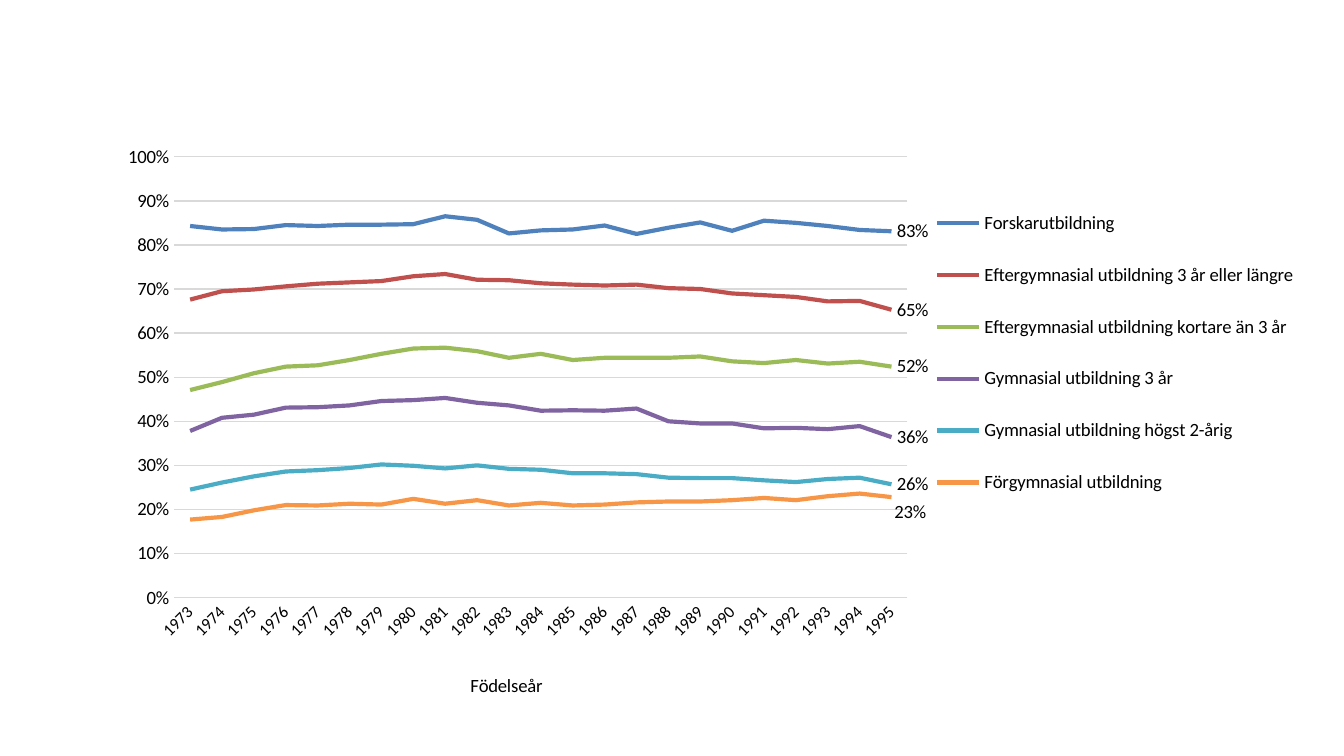
from pptx import Presentation
from pptx.chart.data import CategoryChartData
from pptx.dml.color import RGBColor
from pptx.enum.chart import (XL_CHART_TYPE, XL_LABEL_POSITION, XL_LEGEND_POSITION,
                             XL_MARKER_STYLE, XL_TICK_MARK)
from pptx.oxml import parse_xml
from pptx.oxml.ns import nsdecls, qn
from pptx.util import Pt

FONT = "Calibri"
BLACK = RGBColor(0x00, 0x00, 0x00)
GRID = RGBColor(0xD9, 0xD9, 0xD9)
BLUE = RGBColor(0x4F, 0x81, 0xBD)
RED = RGBColor(0xC0, 0x50, 0x4D)
GREEN = RGBColor(0x9B, 0xBB, 0x59)
PURPLE = RGBColor(0x80, 0x64, 0xA2)
TEAL = RGBColor(0x4B, 0xAC, 0xC6)
ORANGE = RGBColor(0xF7, 0x96, 0x46)

YEARS = [str(year) for year in range(1973, 1996)]
SERIES = [
    ("Forskarutbildning", BLUE,
     [0.843, 0.835, 0.836, 0.845, 0.843, 0.846, 0.846, 0.847, 0.865, 0.857, 0.826, 0.833,
      0.835, 0.844, 0.825, 0.839, 0.851, 0.832, 0.855, 0.850, 0.843, 0.834, 0.831]),
    ("Eftergymnasial utbildning 3 år eller längre", RED,
     [0.676, 0.695, 0.699, 0.706, 0.712, 0.715, 0.718, 0.729, 0.734, 0.721, 0.720, 0.713,
      0.710, 0.708, 0.710, 0.702, 0.700, 0.690, 0.686, 0.682, 0.672, 0.673, 0.653]),
    ("Eftergymnasial utbildning kortare än 3 år", GREEN,
     [0.471, 0.489, 0.509, 0.524, 0.527, 0.539, 0.553, 0.565, 0.567, 0.559, 0.544, 0.553,
      0.539, 0.544, 0.544, 0.544, 0.547, 0.536, 0.532, 0.539, 0.531, 0.535, 0.524]),
    ("Gymnasial utbildning 3 år", PURPLE,
     [0.378, 0.408, 0.415, 0.431, 0.432, 0.436, 0.446, 0.448, 0.453, 0.442, 0.436, 0.424,
      0.425, 0.424, 0.429, 0.400, 0.395, 0.395, 0.384, 0.385, 0.382, 0.389, 0.364]),
    ("Gymnasial utbildning högst 2-årig", TEAL,
     [0.245, 0.261, 0.275, 0.286, 0.289, 0.294, 0.302, 0.299, 0.293, 0.300, 0.292, 0.290,
      0.282, 0.282, 0.280, 0.272, 0.271, 0.271, 0.266, 0.262, 0.269, 0.272, 0.257]),
    ("Förgymnasial utbildning", ORANGE,
     [0.177, 0.183, 0.198, 0.210, 0.209, 0.213, 0.211, 0.224, 0.213, 0.221, 0.209, 0.215,
      0.209, 0.211, 0.216, 0.218, 0.218, 0.221, 0.226, 0.221, 0.230, 0.236, 0.228]),
]


def set_font(font, size):
    font.name = FONT
    font.size = Pt(size)
    font.bold = False
    font.color.rgb = BLACK


def set_line(line, color, width):
    line.color.rgb = color
    line.width = Pt(width)


def set_layout(element, index, **settings):
    for old in element.findall(qn("c:layout")):
        element.remove(old)
    parts = "".join(f'<c:{key} val="{value}"/>' for key, value in settings.items())
    element.insert(index, parse_xml(
        f'<c:layout {nsdecls("c")}><c:manualLayout>{parts}</c:manualLayout></c:layout>'))


def add_line_chart(slide):
    data = CategoryChartData(number_format="0%")
    data.categories = YEARS
    for name, _, values in SERIES:
        data.add_series(name, values)
    chart = slide.shapes.add_chart(
        XL_CHART_TYPE.LINE, Pt(56), Pt(72.7), Pt(643), Pt(306), data).chart
    chart.has_title = False
    set_font(chart.font, 10)
    chart.plots[0].vary_by_categories = False
    set_layout(chart._chartSpace.chart.plotArea, 0, layoutTarget="inner",
               xMode="edge", yMode="edge", x=0.058, y=0.037, w=0.611, h=0.772)
    return chart


def style_series(chart):
    for series, (_, color, values) in zip(chart.plots[0].series, SERIES):
        series.smooth = False
        series.marker.style = XL_MARKER_STYLE.NONE
        set_line(series.format.line, color, 2.25)
        label = series.points[len(values) - 1].data_label
        set_font(label.font, 10)
        label.position = XL_LABEL_POSITION.RIGHT
    lowest_label = chart._chartSpace.xpath(".//c:dLbl")[-1]
    set_layout(lowest_label, 1, x=-0.002, y=0.026)


def style_value_axis(axis):
    axis.minimum_scale = 0
    axis.maximum_scale = 1
    axis.major_unit = 0.1
    axis.major_tick_mark = XL_TICK_MARK.NONE
    axis.format.line.fill.background()
    axis.has_major_gridlines = True
    set_line(axis.major_gridlines.format.line, GRID, 0.75)
    axis.tick_labels.number_format = "0%"
    axis.tick_labels.number_format_is_linked = False
    set_font(axis.tick_labels.font, 10)


def style_category_axis(axis):
    axis.major_tick_mark = XL_TICK_MARK.NONE
    set_line(axis.format.line, GRID, 0.75)
    set_font(axis.tick_labels.font, 9)
    axis._element.find(qn("c:txPr")).find(qn("a:bodyPr")).set("rot", "-2700000")
    title = axis.axis_title
    p = title.text_frame.paragraphs[0]
    r = p.add_run()
    r.text = "Födelseår"
    set_font(r.font, 10)
    set_layout(title._element, 1, xMode="edge", yMode="edge", x=0.302, y=0.935)


def add_legend(chart):
    chart.has_legend = True
    legend = chart.legend
    legend.position = XL_LEGEND_POSITION.RIGHT
    legend.include_in_layout = False
    set_font(legend.font, 10)
    set_layout(legend._element, 1, xMode="edge", yMode="edge",
               x=0.696, y=0.08, w=0.3, h=0.6)


def main():
    prs = Presentation()
    prs.slide_width = Pt(720)
    prs.slide_height = Pt(405)
    s = prs.slides.add_slide(prs.slide_layouts[6])
    chart = add_line_chart(s)
    style_series(chart)
    style_value_axis(chart.value_axis)
    style_category_axis(chart.category_axis)
    add_legend(chart)
    prs.save("out.pptx")


if __name__ == "__main__":
    main()
